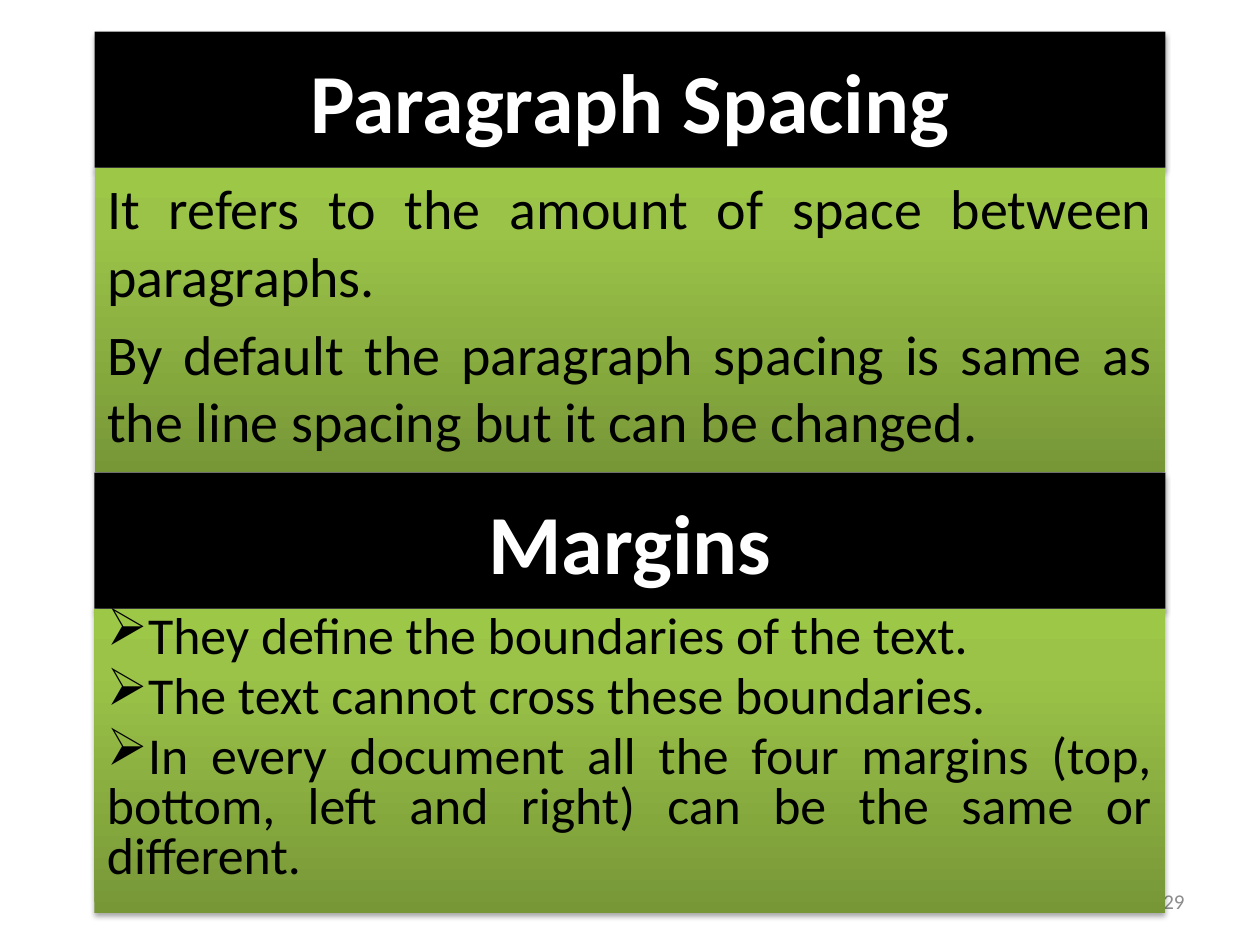
from dataclasses import dataclass

from lxml import etree
from pptx import Presentation
from pptx.dml.color import RGBColor
from pptx.enum import shapes, text
from pptx.oxml import ns
from pptx.util import Inches, Pt

BLACK = RGBColor(0x00, 0x00, 0x00)
WHITE = RGBColor(0xFF, 0xFF, 0xFF)
GREY = RGBColor(0x8C, 0x8C, 0x8C)
GREEN_STOPS = (
    (0, RGBColor(0x77, 0x97, 0x37)),
    (80, RGBColor(0x9B, 0xC3, 0x48)),
    (100, RGBColor(0x9D, 0xC7, 0x46)),
)
FONT = "Calibri"
LEFT, TOP, WIDTH = 0.75, 0.25, 8.5
HEADING_HEIGHT, BODY_HEIGHT = 1.08, 2.42


@dataclass
class Section:
    heading: str
    points: list[str]
    size: float
    line_spacing: float = 1.0
    bullet: str = ""


SECTIONS = [
    Section(
        "Paragraph Spacing",
        [
            "It refers to the amount of space between paragraphs.",
            "By default the paragraph spacing is same as the line spacing "
            "but it can be changed.",
        ],
        size=32,
    ),
    Section(
        "Margins",
        [
            "They define the boundaries of the text.",
            "The text cannot cross these boundaries.",
            "In every document all the four margins (top, bottom, left and right) "
            "can be the same or different.",
        ],
        size=29.6,
        line_spacing=0.8,
        bullet="➢",
    ),
]


def add_element(parent, tag: str, **attributes):
    return etree.SubElement(parent, ns.qn(tag), attributes)


def place(shape, top: float, height: float) -> None:
    shape.left, shape.top = Inches(LEFT), Inches(top)
    shape.width, shape.height = Inches(WIDTH), Inches(height)


def add_shadow(shape) -> None:
    shape.shadow.inherit = False
    effects = shape.element.spPr.find(ns.qn("a:effectLst"))
    shadow = add_element(
        effects, "a:outerShdw", blurRad=str(Pt(3.1)), dist=str(Pt(1.8)),
        dir="5400000", rotWithShape="0",
    )
    color = add_element(shadow, "a:srgbClr", val=str(BLACK))
    add_element(color, "a:alpha", val="35000")


def fill_green(shape) -> None:
    """Fill with a gradient that runs from the bottom edge up."""
    shape.fill.gradient()
    shape.fill.gradient_angle = 90
    stops = shape.element.spPr.find(".//" + ns.qn("a:gsLst"))
    for stop in list(stops):
        stops.remove(stop)
    for percent, color in GREEN_STOPS:
        stop = add_element(stops, "a:gs", pos=str(percent * 1000))
        add_element(stop, "a:srgbClr", val=str(color))


def write(shape, lines: list[str], size: float, color: RGBColor, alignment,
          anchor, bold: bool = False) -> None:
    frame = shape.text_frame
    frame.text = "\n".join(lines)
    frame.word_wrap = True
    frame.auto_size = text.MSO_AUTO_SIZE.NONE
    frame.vertical_anchor = anchor
    for paragraph in frame.paragraphs:
        paragraph.alignment = alignment
        for run in paragraph.runs:
            run.font.name = FONT
            run.font.size = Pt(size)
            run.font.bold = bold
            run.font.color.rgb = color


def draw_heading(shape, section: Section, top: float) -> None:
    place(shape, top, HEADING_HEIGHT)
    shape.fill.solid()
    shape.fill.fore_color.rgb = BLACK
    shape.line.fill.background()
    add_shadow(shape)
    write(shape, [section.heading], 48, WHITE, text.PP_ALIGN.CENTER,
          text.MSO_ANCHOR.MIDDLE, bold=True)


def draw_body(shape, section: Section, top: float) -> None:
    place(shape, top, BODY_HEIGHT)
    fill_green(shape)
    shape.line.fill.background()
    add_shadow(shape)
    write(shape, section.points, section.size, BLACK, text.PP_ALIGN.JUSTIFY,
          text.MSO_ANCHOR.TOP)
    for paragraph in shape.text_frame.paragraphs:
        paragraph.line_spacing = section.line_spacing
        paragraph.space_before = Pt(section.size * 0.2)
        if section.bullet:
            properties = paragraph._p.get_or_add_pPr()
            properties.set("marL", "0")
            properties.set("indent", "0")
            add_element(properties, "a:buChar", char=section.bullet)


def add_page_number(slide, number: str) -> None:
    box = slide.shapes.add_textbox(Inches(7.17), Inches(6.95), Inches(2.33), Inches(0.4))
    write(box, [number], 12, GREY, text.PP_ALIGN.RIGHT, text.MSO_ANCHOR.MIDDLE)


def add_panel(slide):
    return slide.shapes.add_shape(shapes.MSO_SHAPE.RECTANGLE, 0, 0, 0, 0)


def main() -> None:
    deck = Presentation()
    deck.slide_width, deck.slide_height = Inches(10), Inches(7.5)
    slide = deck.slides.add_slide(deck.slide_layouts[0])
    spacing, margins = SECTIONS

    draw_heading(slide.shapes.title, spacing, TOP)
    draw_body(slide.placeholders[1], spacing, TOP + HEADING_HEIGHT)
    add_page_number(slide, "29")

    margins_top = TOP + HEADING_HEIGHT + BODY_HEIGHT
    draw_heading(add_panel(slide), margins, margins_top)
    draw_body(add_panel(slide), margins, margins_top + HEADING_HEIGHT)
    deck.save("out.pptx")


if __name__ == "__main__":
    main()
